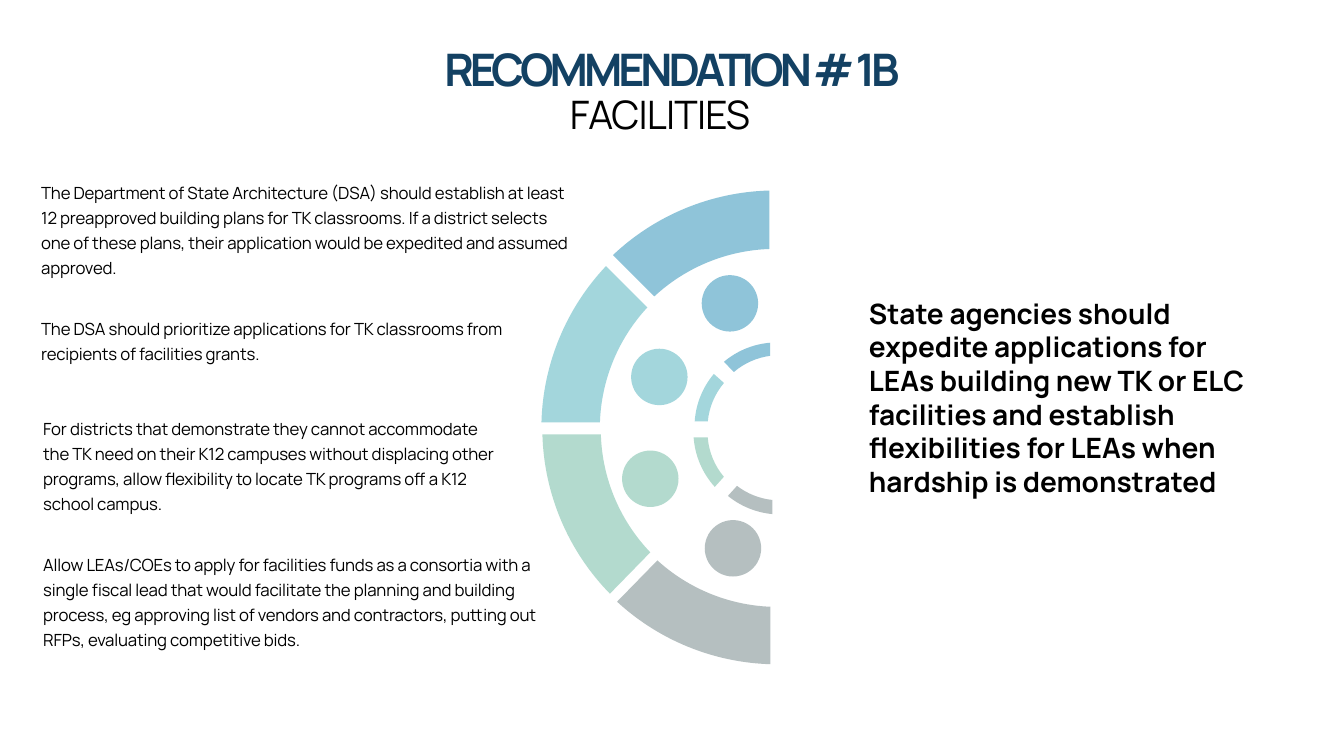
from math import asin, cos, hypot, sin, tan

from lxml.etree import SubElement
from pptx import Presentation
from pptx.dml.color import RGBColor
from pptx.enum.shapes import MSO_SHAPE
from pptx.enum.text import MSO_ANCHOR, MSO_AUTO_SIZE, PP_ALIGN
from pptx.oxml.ns import qn
from pptx.util import Pt

PX = 9144
FONT = "Manrope"
BLACK = RGBColor(0x00, 0x00, 0x00)
NAVY = RGBColor(0x13, 0x41, 0x63)
BLUE = RGBColor(0x34, 0x94, 0xBA)
TEAL = RGBColor(0x58, 0xB6, 0xC0)
GREEN = RGBColor(0x75, 0xBD, 0xA7)
GRAY = RGBColor(0x7A, 0x8C, 0x8E)
OPACITY = 55000

OUTER_RADII = (235, 177)
INNER_RADII = (82, 69)
CIRCLE_SIZE = 56

SECTORS = [
    (BLUE, [(226, 0), (71, 64), (112, 105), (226, 58)],
     [(227, 151), (181, 170), (191, 180), (227, 164)], (159, 84)),
    (TEAL, [(64, 75), (0, 230), (58, 230), (105, 116)],
     [(171, 182), (152, 229), (165, 229), (181, 191)], (89, 157)),
    (GREEN, [(1, 242), (68, 400), (108, 359), (59, 242)],
     [(151, 245), (172, 294), (181, 284), (165, 245)], (80, 258)),
    (GRAY, [(75, 408), (227, 470), (227, 413), (115, 367)],
     [(185, 303), (229, 321), (229, 307), (194, 293)], (162, 327)),
]

RECOMMENDATIONS = [
    ((0, 0, 547, 109),
     "The Department of State Architecture (DSA) should establish at least 12 "
     "preapproved building plans for TK classrooms. If a district selects one of "
     "these plans, their application would be expedited and assumed approved."),
    ((0, 135, 480, 59),
     "The DSA should prioritize applications for TK classrooms from recipients "
     "of facilities grants."),
    ((2, 234, 480, 109),
     "For districts that demonstrate they cannot accommodate the TK need on their "
     "K12 campuses without displacing other programs, allow flexibility to locate "
     "TK programs off a K12 school campus."),
    ((2, 369, 521, 109),
     "Allow LEAs/COEs to apply for facilities funds as a consortia with a single "
     "fiscal lead that would facilitate the planning and building process, eg "
     "approving list of vendors and contractors, putting out RFPs, evaluating "
     "competitive bids."),
]


def add_text(slide, box, text, size, color=BLACK, bold=False, spacing=0,
             line=None, align=PP_ALIGN.LEFT, anchor=MSO_ANCHOR.TOP):
    shape = slide.shapes.add_textbox(*(value * PX for value in box))
    frame = shape.text_frame
    frame.word_wrap = True
    frame.auto_size = MSO_AUTO_SIZE.SHAPE_TO_FIT_TEXT
    frame.vertical_anchor = anchor
    paragraph = frame.paragraphs[0]
    paragraph.alignment = align
    if line:
        paragraph.line_spacing = Pt(line)
    run = paragraph.add_run()
    run.text = text
    if spacing:
        run._r.get_or_add_rPr().set("spc", str(spacing))
    paragraph.font.name = FONT
    paragraph.font.size = Pt(size)
    paragraph.font.bold = bold
    paragraph.font.color.rgb = color


def paint(shape, color):
    shape.shadow.inherit = False
    shape.fill.solid()
    shape.fill.fore_color.rgb = color
    shape.line.fill.background()
    color_element = shape._element.spPr.find(qn("a:solidFill"))[0]
    SubElement(color_element, qn("a:alpha")).set("val", str(OPACITY))


def arc_controls(start, end, radius):
    (x1, y1), (x2, y2) = start, end
    chord = hypot(x2 - x1, y2 - y1)
    along_x, along_y = (x2 - x1) / chord, (y2 - y1) / chord
    half_angle = asin(chord / 2 / radius)
    handle = 4 / 3 * tan(half_angle / 2) * radius
    forward, outward = handle * cos(half_angle), handle * sin(half_angle)
    return [
        (x + side * forward * along_x - outward * along_y,
         y + side * forward * along_y + outward * along_x)
        for (x, y), side in ((start, 1), (end, -1))
    ]


def bend_line(line, controls, shape, left, top):
    curve = line.makeelement(qn("a:cubicBezTo"))
    for x, y in controls:
        point = SubElement(curve, qn("a:pt"))
        point.set("x", str(round((left + x) * PX) - shape.left))
        point.set("y", str(round((top + y) * PX) - shape.top))
    curve.append(line[0])
    line.getparent().replace(line, curve)


def add_ring_sector(slide, left, top, corners, radii, color):
    outer_start, outer_end, inner_end, inner_start = corners
    points = [((left + x) * PX, (top + y) * PX) for x, y in corners]
    builder = slide.shapes.build_freeform(*points[0])
    builder.add_line_segments(points[1:], close=True)
    shape = builder.convert_to_shape()
    lines = list(shape._element.iter(qn("a:lnTo")))
    bend_line(lines[0], arc_controls(outer_start, outer_end, radii[0]),
              shape, left, top)
    bend_line(lines[2], reversed(arc_controls(inner_start, inner_end, radii[1])),
              shape, left, top)
    paint(shape, color)


def add_half_wheel(slide, left, top):
    for color, outer, inner, (x, y) in SECTORS:
        add_ring_sector(slide, left, top, outer, OUTER_RADII, color)
        add_ring_sector(slide, left, top, inner, INNER_RADII, color)
        circle = slide.shapes.add_shape(
            MSO_SHAPE.OVAL, (left + x) * PX, (top + y) * PX,
            CIRCLE_SIZE * PX, CIRCLE_SIZE * PX)
        paint(circle, color)


def add_recommendations(slide, left, top):
    for (x, y, width, height), text in RECOMMENDATIONS:
        add_text(slide, (left + x, top + y, width, height), text, 12,
                 spacing=-10, line=18)


def add_heading(slide, left, top, width):
    add_text(slide, (left, top + 126, width, 43), "FACILITIES", 28,
             spacing=-60, line=21, align=PP_ALIGN.CENTER)
    add_text(slide, (left + 12, top, width, 124), "RECOMMENDATION # 1B", 32, NAVY,
             bold=True, spacing=-290, line=94, align=PP_ALIGN.CENTER,
             anchor=MSO_ANCHOR.BOTTOM)


def add_summary(slide, box):
    add_text(slide, box,
             "State agencies should expedite applications for LEAs building new TK "
             "or ELC facilities and establish flexibilities for LEAs when hardship "
             "is demonstrated", 20, bold=True, anchor=MSO_ANCHOR.MIDDLE)


def main():
    presentation = Presentation()
    presentation.slide_width = 1333 * PX
    presentation.slide_height = 750 * PX
    slide = presentation.slides.add_slide(presentation.slide_layouts[6])
    add_half_wheel(slide, 537, 189)
    add_recommendations(slide, 31, 171)
    add_heading(slide, 71, -24, 1167)
    add_summary(slide, (852, 288, 406, 212))
    presentation.save("out.pptx")


if __name__ == "__main__":
    main()
